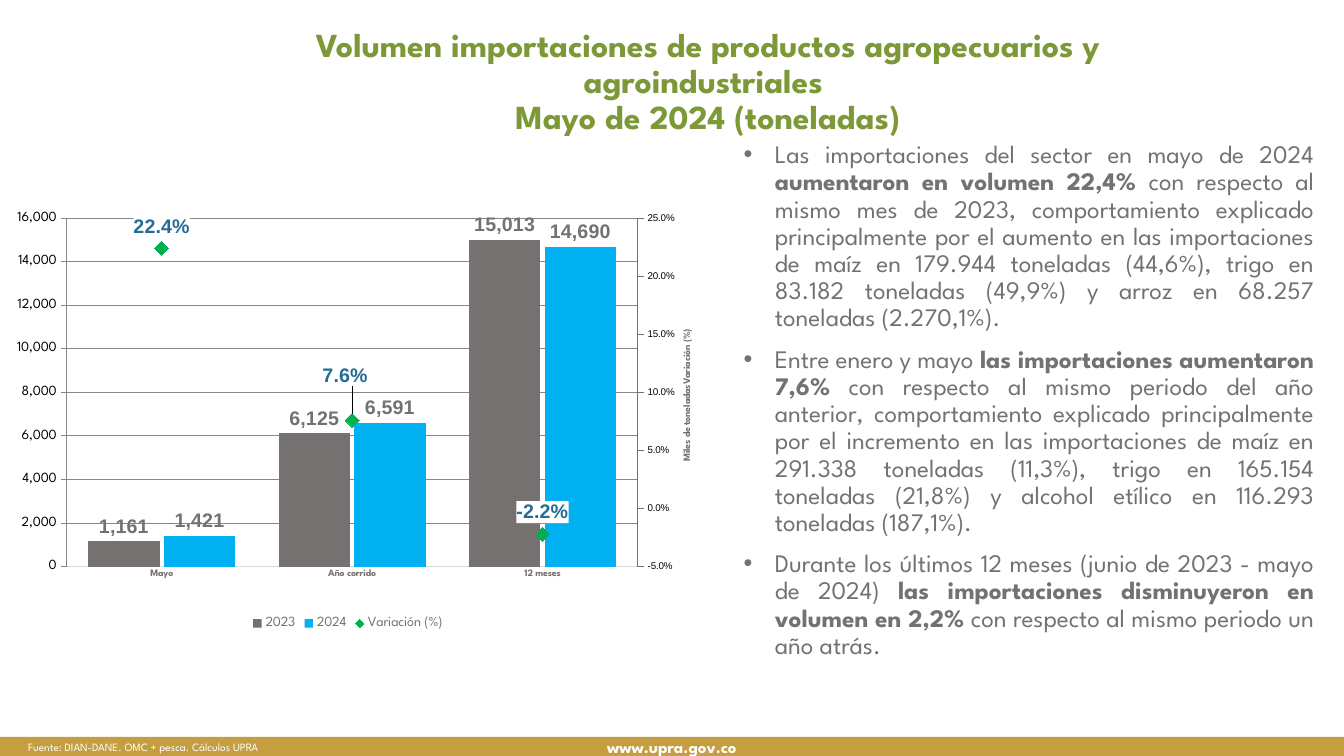
from pptx import Presentation
from pptx.chart.axis import ValueAxis
from pptx.chart.data import CategoryChartData
from pptx.dml.color import RGBColor
from pptx.enum.chart import (XL_CHART_TYPE, XL_LABEL_POSITION, XL_LEGEND_POSITION,
                             XL_MARKER_STYLE, XL_TICK_MARK)
from pptx.enum.shapes import MSO_SHAPE
from pptx.enum.text import MSO_ANCHOR, MSO_AUTO_SIZE, PP_ALIGN
from pptx.oxml import parse_xml
from pptx.oxml.ns import nsdecls, qn
from pptx.util import Cm, Pt

CENTER, JUSTIFY = PP_ALIGN.CENTER, PP_ALIGN.JUSTIFY
TOP, MIDDLE = MSO_ANCHOR.TOP, MSO_ANCHOR.MIDDLE
NO_TICK, TICK_OUT = XL_TICK_MARK.NONE, XL_TICK_MARK.OUTSIDE
ABOVE, OUTSIDE_END = XL_LABEL_POSITION.ABOVE, XL_LABEL_POSITION.OUTSIDE_END

# Content
FONT, LABEL_FONT = "League Spartan", "Arial"
GREEN, GOLD, GRAY, WHITE, BLACK = "7D9837", "C59E41", "767171", "FFFFFF", "000000"
SKY, BLUE, MARKER_GREEN, PALE = "00B0F0", "236C95", "00B050", "D9D9D9"
TITLE = ("Volumen importaciones de productos agropecuarios y agroindustriales "
         "\vMayo de 2024 (toneladas)")
SITE = "www.upra.gov.co"
SOURCE = "Fuente: DIAN-DANE. OMC + pesca. Cálculos UPRA"
# Each finding: plain opening, bold statement, plain ending
FINDINGS = [
    ("Las importaciones del sector en mayo de 2024 ", "aumentaron en volumen 22,4% ",
     "con respecto al mismo mes de 2023, comportamiento explicado principalmente por el "
     "aumento en las importaciones de maíz en 179.944 toneladas (44,6%), trigo en 83.182 "
     "toneladas (49,9%) y arroz en 68.257 toneladas (2.270,1%)."),
    ("Entre enero y mayo ", "las importaciones aumentaron 7,6%",
     " con respecto al mismo periodo del año anterior, comportamiento explicado "
     "principalmente por el incremento en las importaciones de maíz en 291.338 toneladas "
     "(11,3%), trigo en 165.154 toneladas (21,8%) y alcohol etílico en 116.293 toneladas "
     "(187,1%)."),
    ("Durante los últimos 12 meses (junio de 2023 - mayo de 2024) ",
     "las importaciones disminuyeron en volumen en 2,2%",
     " con respecto al mismo periodo un año atrás."),
]
PERIODS = ["Mayo", "Año corrido", "12 meses"]
VOLUMES = [("2023", [1161, 6125, 15013], GRAY), ("2024", [1421, 6591, 14690], SKY)]
VARIATION = ("Variación (%)", [0.224, 0.076, -0.022])
VOLUME_TITLE = "Miles de toneladas"
VOLUME_FORMAT, PERCENT_FORMAT = "#,##0", "0.0%"

# Places in cm: left, top, width, height
SLIDE_SIZE = (33.87, 19.05)
TITLE_AT = (6.2, 0.58, 23.27, 2.72)
BAND_AT = (0, 18.57, 33.87, 0.48)
SOURCE_AT = (0.46, 18.52, 32.79, 0.61)
FINDINGS_AT = (18.49, 3.45, 14.88, 14.99)
CHART_AT = (-0.03, 4.72, 17.6, 11.25)
INDENT = Cm(0.79)


def cm(place):
    return [Cm(length) for length in place]


def color(value):
    return RGBColor.from_string(value)


def paint(part, fill):
    part.fill.solid()
    part.fill.fore_color.rgb = color(fill)
    part.line.fill.background()


def style(font, size, fill, bold=False, name=FONT):
    font.size, font.bold, font.name = Pt(size), bold, name
    font.color.rgb = color(fill)


def element(xml):
    """Parse one element, given without its namespaces."""
    head, rest = xml.split(" ", 1)
    return parse_xml(f'{head} {nsdecls("a", "c")} {rest}')


def write(frame, paragraphs, size, fill, align=CENTER, anchor=TOP, spacing=None, gap=0,
          bullet=False):
    """Each paragraph is a list of (text, bold) runs."""
    frame.word_wrap, frame.auto_size = True, MSO_AUTO_SIZE.NONE
    frame.vertical_anchor = anchor
    for index, runs in enumerate(paragraphs):
        paragraph = frame.add_paragraph() if index else frame.paragraphs[0]
        paragraph.alignment, paragraph.line_spacing = align, spacing
        paragraph.space_before = Pt(gap if index else 0)
        if bullet:
            properties = paragraph._p.get_or_add_pPr()
            properties.set("marL", str(INDENT))
            properties.set("indent", str(-INDENT))
            properties.append(element('<a:buFont typeface="Arial"/>'))
            properties.append(element('<a:buChar char="•"/>'))
        for text, bold in runs:
            for part, line in enumerate(text.split("\v")):
                if part:
                    paragraph.add_line_break()
                run = paragraph.add_run()
                run.text = line
                style(run.font, size, fill, bold)


def format_value_axis(axis, title, low, high, step, number_format, fill, tick):
    axis.minimum_scale, axis.maximum_scale, axis.major_unit = low, high, step
    axis.has_major_gridlines = False
    axis.major_tick_mark, axis.minor_tick_mark = tick, NO_TICK
    numbers = axis.tick_labels
    numbers.number_format, numbers.number_format_is_linked = number_format, False
    style(numbers.font, 7, fill, name=LABEL_FONT)
    run = axis.axis_title.text_frame.paragraphs[0].add_run()
    run.text = title
    style(run.font, 7, GRAY, bold=True)


def label_values(labels, number_format, fill, position):
    labels.show_value, labels.position = True, position
    labels.number_format, labels.number_format_is_linked = number_format, False
    style(labels.font, 14, fill, bold=True, name=LABEL_FONT)


def manual_layout(**settings):
    items = "".join(f'<c:{key} val="{value}"/>' for key, value in settings.items())
    return element(f'<c:layout ><c:manualLayout>{items}</c:manualLayout></c:layout>')


def axis_element(tag, own, other, hidden, side, crosses):
    return element(
        f'<c:{tag} ><c:axId val="{own}"/><c:scaling><c:orientation val="minMax"/></c:scaling>'
        f'<c:delete val="{hidden}"/><c:axPos val="{side}"/><c:tickLblPos val="nextTo"/>'
        f'<c:crossAx val="{other}"/><c:crosses val="{crosses}"/></c:{tag}>')


def move_variation_to_right(area):
    """Turn the last series into a line on a second axis and return that axis."""
    bars = area.find(qn("c:barChart"))
    series = bars.findall(qn("c:ser"))[-1]
    for inverted in series.findall(qn("c:invertIfNegative")):
        series.remove(inverted)
    line = element('<c:lineChart ><c:grouping val="standard"/><c:varyColors val="0"/>'
                   '<c:marker val="1"/><c:axId val="501"/><c:axId val="502"/></c:lineChart>')
    line.insert(2, series)
    bars.addnext(line)
    right = axis_element("valAx", 502, 501, 0, "r", "max")
    area.find(qn("c:valAx")).addnext(right)
    right.addnext(axis_element("catAx", 501, 502, 1, "b", "autoZero"))
    for layout in area.findall(qn("c:layout")):
        area.remove(layout)
    area.insert(0, manual_layout(layoutTarget="inner", xMode="edge", yMode="edge",
                                 x=0.097, y=0.069, w=0.818, h=0.781))
    return ValueAxis(right)


def add_volume_chart(slide):
    data = CategoryChartData()
    data.categories = PERIODS
    for name, values, _ in VOLUMES:
        data.add_series(name, values, VOLUME_FORMAT)
    data.add_series(*VARIATION, PERCENT_FORMAT)
    chart = slide.shapes.add_chart(XL_CHART_TYPE.COLUMN_CLUSTERED, *cm(CHART_AT), data).chart
    style(chart.font, 10, BLACK)
    chart.has_title, chart.has_legend = False, True
    chart.legend.position = XL_LEGEND_POSITION.BOTTOM
    chart.legend.include_in_layout = False
    style(chart.legend.font, 10, GRAY)

    # Axes
    area = chart.element.find(".//" + qn("c:plotArea"))
    right_axis = move_variation_to_right(area)
    format_value_axis(chart.value_axis, VOLUME_TITLE, 0, 16000, 2000,
                      VOLUME_FORMAT, GRAY, NO_TICK)
    chart.value_axis.format.line.fill.background()
    format_value_axis(right_axis, VARIATION[0], -0.05, 0.25, 0.05,
                      PERCENT_FORMAT, BLACK, TICK_OUT)
    right_axis.format.line.color.rgb = color(GRAY)
    for body in area.xpath(".//c:title//a:bodyPr"):
        body.set("rot", "-5400000")
    periods = chart.category_axis
    periods.major_tick_mark = NO_TICK
    periods.format.line.color.rgb = color(PALE)
    periods.format.line.width = Pt(0.75)
    style(periods.tick_labels.font, 7, GRAY, bold=True)

    # Volume columns
    columns, line = chart.plots
    columns.gap_width, columns.overlap, columns.vary_by_categories = 61, -6, False
    for series, (_, _, fill) in zip(columns.series, VOLUMES):
        paint(series.format, fill)
        label_values(series.data_labels, VOLUME_FORMAT, GRAY, OUTSIDE_END)

    # Variation markers, with the middle label raised clear of the columns
    variation = line.series[0]
    variation.smooth = False
    variation.format.line.fill.background()
    variation.marker.style, variation.marker.size = XL_MARKER_STYLE.DIAMOND, 10
    paint(variation.marker.format, MARKER_GREEN)
    label_values(variation.data_labels, PERCENT_FORMAT, BLUE, ABOVE)
    labels = area.find(f'{qn("c:lineChart")}//{qn("c:dLbls")}')
    labels.find(qn("c:numFmt")).addnext(element(
        f'<c:spPr ><a:solidFill><a:srgbClr val="{WHITE}"/></a:solidFill></c:spPr>'))
    raised = variation.points[1].data_label
    style(raised.font, 14, BLUE, bold=True, name=LABEL_FONT)
    raised.position = ABOVE
    index = labels.find(f'{qn("c:dLbl")}/{qn("c:idx")}')
    index.addnext(element(f'<c:numFmt formatCode="{PERCENT_FORMAT}" sourceLinked="0"/>'))
    index.addnext(manual_layout(x=-0.01, y=-0.05))


deck = Presentation()
deck.slide_width, deck.slide_height = cm(SLIDE_SIZE)
slide = deck.slides.add_slide(deck.slide_layouts[5])
# Footer
band = slide.shapes.add_shape(MSO_SHAPE.RECTANGLE, *cm(BAND_AT))
band.shadow.inherit = False
paint(band, GOLD)
write(band.text_frame, [[(SITE, True)]], 12, WHITE, anchor=MIDDLE)
source = slide.shapes.add_textbox(*cm(SOURCE_AT))
write(source.text_frame, [[(SOURCE, False)]], 8, WHITE, align=JUSTIFY)
# Title, findings and chart
title = slide.shapes.title
title.left, title.top, title.width, title.height = cm(TITLE_AT)
write(title.text_frame, [[(TITLE, True)]], 24, GREEN, spacing=0.9)
findings = slide.shapes.add_textbox(*cm(FINDINGS_AT))
finding_runs = [list(zip(finding, (False, True, False))) for finding in FINDINGS]
write(findings.text_frame, finding_runs, 18, GRAY, align=JUSTIFY, spacing=0.9, gap=10,
      bullet=True)
add_volume_chart(slide)
deck.save("out.pptx")
